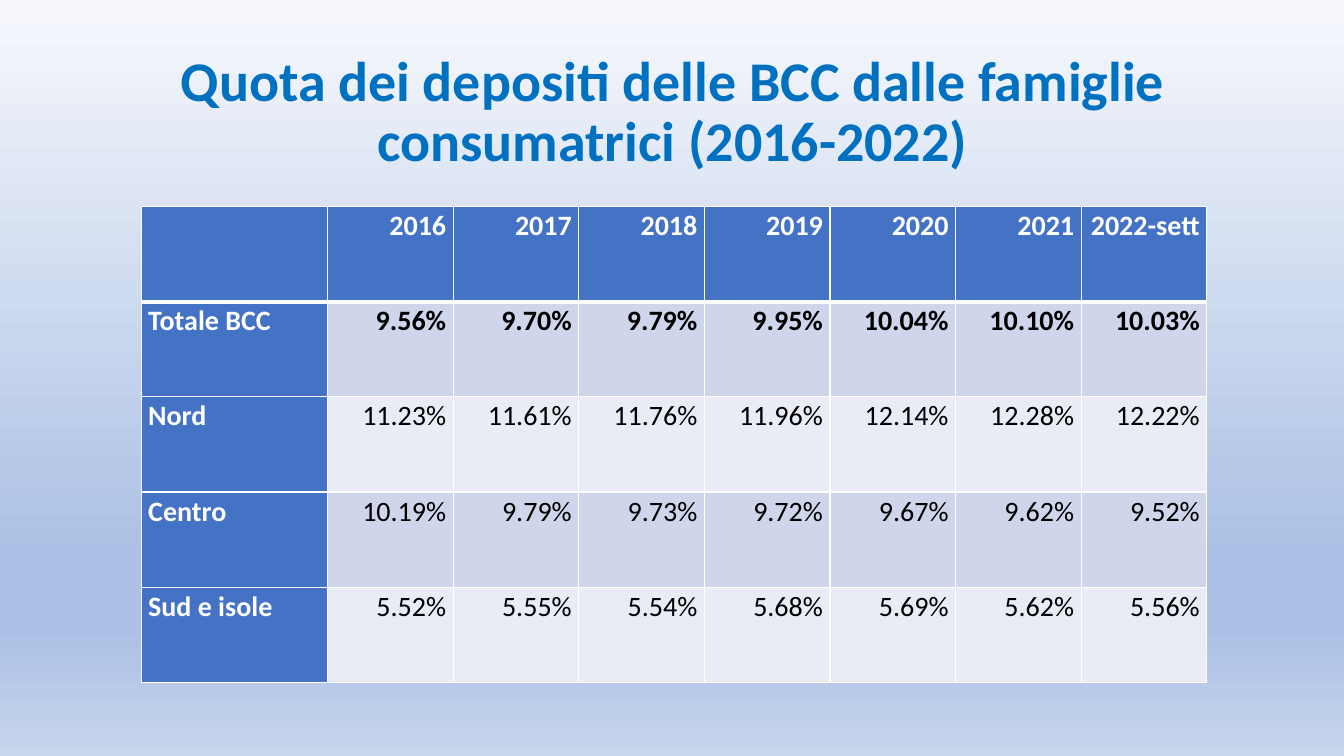
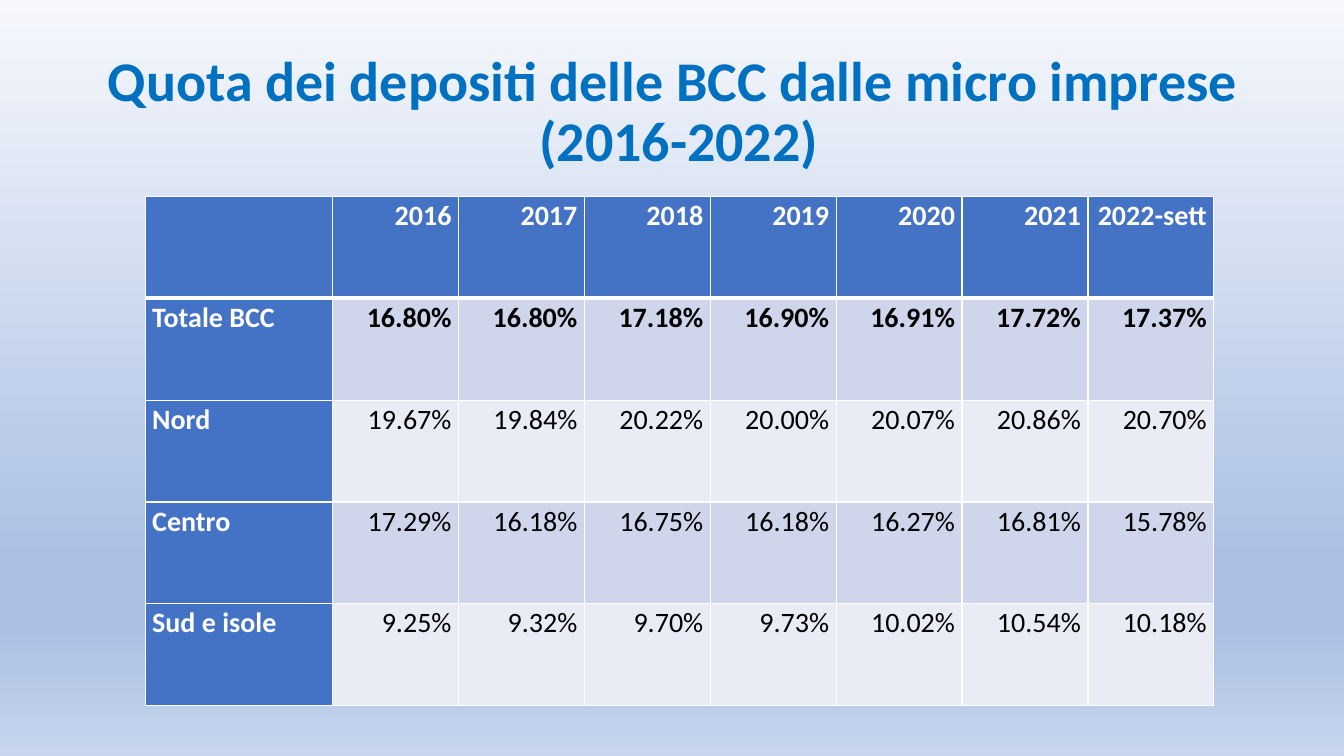
from lxml.etree import SubElement
from pptx import Presentation
from pptx.dml.color import RGBColor
from pptx.enum.text import MSO_ANCHOR, PP_ALIGN
from pptx.oxml.ns import qn
from pptx.util import Inches, Pt

COLOURS = {
    "title": "0070C0",
    "header": "4472C4",
    "odd": "CFD5EA",
    "even": "E9EBF5",
    "white": "FFFFFF",
    "black": "000000",
}
GRADIENT = [(0, "F6F8FC"), (74, "ABC0E4"), (83, "ABC0E4"), (100, "C7D5ED")]
YEARS = ["2016", "2017", "2018", "2019", "2020", "2021", "2022-sett"]
AREAS = ["Totale BCC", "Nord", "Centro", "Sud e isole"]
CELL_FORMAT = {
    "margin_left": Inches(0.07),
    "margin_right": Inches(0.07),
    "margin_top": 0,
    "margin_bottom": 0,
}
SLIDES = [
    {
        "title": "Quota dei depositi delle BCC dalle famiglie consumatrici (2016-2022)",
        "place": (1.4, 2.05, 10.57, 4.72),
        "label_width": 1.85,
        "shares": [
            [9.56, 9.70, 9.79, 9.95, 10.04, 10.10, 10.03],
            [11.23, 11.61, 11.76, 11.96, 12.14, 12.28, 12.22],
            [10.19, 9.79, 9.73, 9.72, 9.67, 9.62, 9.52],
            [5.52, 5.55, 5.54, 5.68, 5.69, 5.62, 5.56],
        ],
    },
    {
        "title": "Quota dei depositi delle BCC dalle micro imprese\v (2016-2022)",
        "place": (1.44, 1.95, 10.6, 5.05),
        "label_width": 1.86,
        "shares": [
            [16.80, 16.80, 17.18, 16.90, 16.91, 17.72, 17.37],
            [19.67, 19.84, 20.22, 20.00, 20.07, 20.86, 20.70],
            [17.29, 16.18, 16.75, 16.18, 16.27, 16.81, 15.78],
            [9.25, 9.32, 9.70, 9.73, 10.02, 10.54, 10.18],
        ],
    },
]


def write(para, text, size, colour, bold, **layout):
    para.text = text
    for name, value in layout.items():
        setattr(para, name, value)
    for span in para.runs:
        for name, value in {"name": "Calibri", "size": Pt(size), "bold": bold}.items():
            setattr(span.font, name, value)
        span.font.color.rgb = RGBColor.from_string(COLOURS[colour])


def add_borders(cell, widths):
    properties = cell._tc.get_or_add_tcPr()
    for side, width in widths.items():
        line = SubElement(properties, qn(f"a:ln{side}"), w=str(Pt(width)))
        solid = SubElement(line, qn("a:solidFill"))
        SubElement(solid, qn("a:srgbClr"), val=COLOURS["white"])


deck = Presentation()
deck.slide_width = Inches(13.33)
deck.slide_height = Inches(7.5)

background = deck.slide_master.background.fill
background.gradient()
background.gradient_angle = 270
stops = deck.slide_master.element.find(".//" + qn("p:bgPr")).find(".//" + qn("a:gsLst"))
for stop in list(stops):
    stops.remove(stop)
for position, colour in GRADIENT:
    stop = SubElement(stops, qn("a:gs"), pos=str(position * 1000))
    SubElement(stop, qn("a:srgbClr"), val=colour)

for content in SLIDES:
    page = deck.slides.add_slide(deck.slide_layouts[6])
    box = page.shapes.add_textbox(Inches(0.92), Inches(0.4), Inches(11.5), Inches(1.45))
    box.text_frame.word_wrap = True
    box.text_frame.vertical_anchor = MSO_ANCHOR.MIDDLE
    write(box.text_frame.paragraphs[0], content["title"], 40, "title", True,
          alignment=PP_ALIGN.CENTER, line_spacing=0.9)

    rows = [[""] + YEARS]
    for area, shares in zip(AREAS, content["shares"]):
        rows.append([area] + [f"{share:.2f}%" for share in shares])

    left, top, width, height = content["place"]
    table = page.shapes.add_table(len(rows), len(rows[0]), Inches(left), Inches(top),
                                  Inches(width), Inches(height)).table
    table.first_col = True
    year_width = (width - content["label_width"]) / len(YEARS)
    for index, column in enumerate(table.columns):
        column.width = Inches(year_width if index else content["label_width"])

    for row_index, row in enumerate(rows):
        for column_index, text in enumerate(row):
            cell = table.cell(row_index, column_index)
            for name, value in CELL_FORMAT.items():
                setattr(cell, name, value)
            is_header = row_index == 0 or column_index == 0
            band = "header" if is_header else "odd" if row_index % 2 else "even"
            add_borders(cell, {"L": 1, "R": 1, "T": 3 if row_index == 1 else 1,
                               "B": 3 if row_index == 0 else 1})
            cell.fill.solid()
            cell.fill.fore_color.rgb = RGBColor.from_string(COLOURS[band])
            write(cell.text_frame.paragraphs[0], text, 20,
                  "white" if is_header else "black", is_header or row_index == 1,
                  alignment=PP_ALIGN.RIGHT if column_index else PP_ALIGN.JUSTIFY,
                  line_spacing=1.07, space_after=Pt(8))

deck.save("out.pptx")
